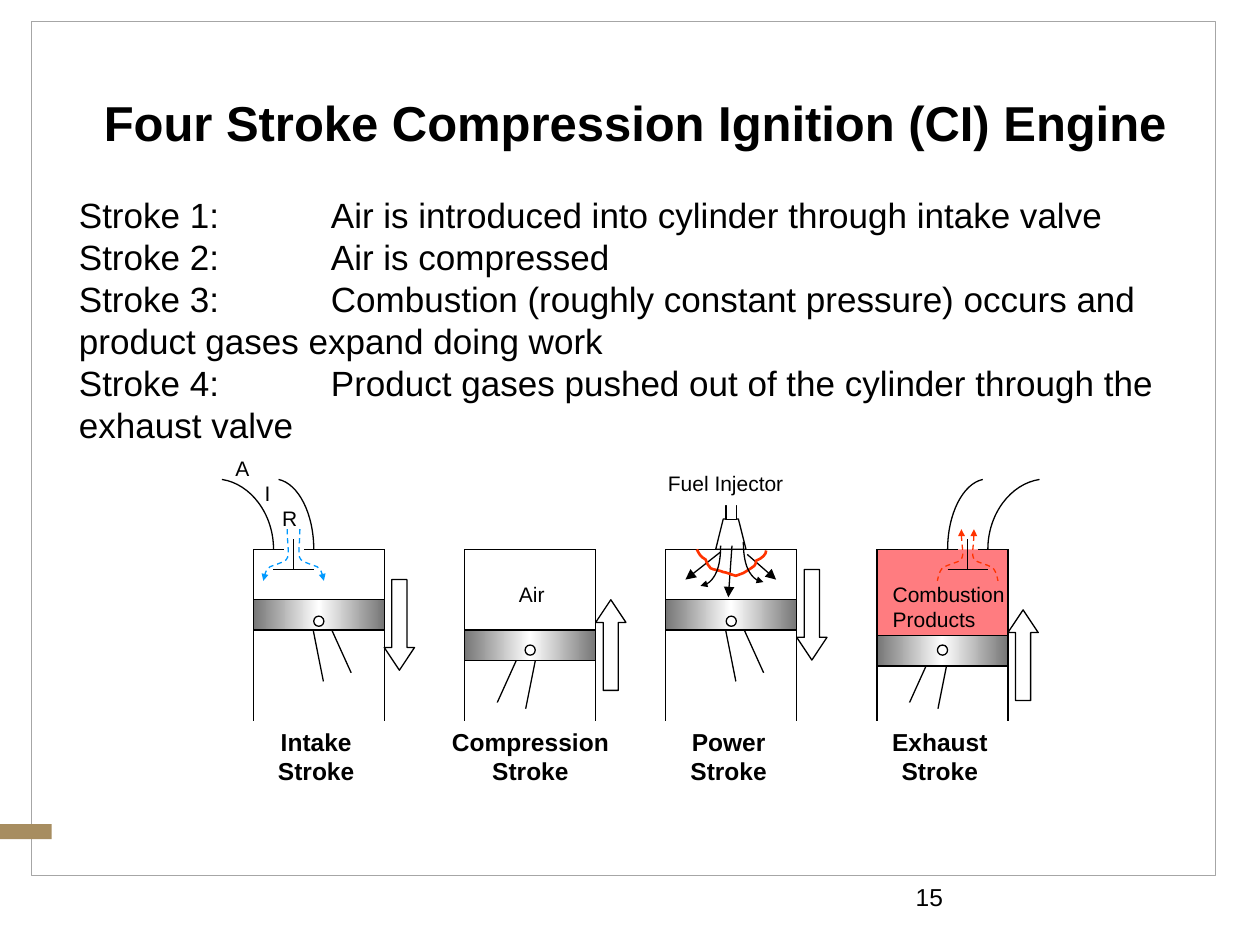
"""Build a slide on the four strokes of a compression ignition engine."""
from lxml.etree import SubElement
from pptx import Presentation
from pptx.dml.color import RGBColor
from pptx.enum.dml import MSO_LINE as Dash
from pptx.enum.shapes import MSO_CONNECTOR as Link, MSO_SHAPE as Shape
from pptx.enum.text import MSO_ANCHOR as Anchor, PP_ALIGN as Align
from pptx.oxml.ns import qn
from pptx.shapes.connector import Connector
from pptx.util import Pt

COLORS = {"black": "000000", "white": "FFFFFF", "frame": "A6A6A6", "tab": "A78D60",
          "steel": "767676", "gas": "FF7C80", "air": "0099FF", "flame": "FF3300"}


def style(item, line="black", fill=None, width=0.75, dash=False, arrow=None, size="med"):
    if not isinstance(item, Connector):
        if fill:
            item.fill.solid()
            item.fill.fore_color.rgb = RGBColor.from_string(COLORS[fill])
        else:
            item.fill.background()
    if line:
        item.line.color.rgb = RGBColor.from_string(COLORS[line])
        item.line.width = Pt(width)
        if dash:
            item.line.dash_style = Dash.DASH
        if arrow:
            SubElement(item.element.spPr.find(qn("a:ln")), qn(f"a:{arrow}"),
                       type="triangle", w=size, len=size)
    else:
        item.line.fill.background()
    if isinstance(item, Connector):
        SubElement(item.element.spPr, qn("a:effectLst"))
    else:
        item.shadow.inherit = False
    return item


def write(frame, lines, size, bold=False, align=Align.LEFT, indents=None, tab=None):
    frame.word_wrap = True
    for number, line in enumerate(lines):
        paragraph = frame.paragraphs[0] if number == 0 else frame.add_paragraph()
        paragraph.alignment = align
        paragraph.line_spacing = Pt(size * 1.2)
        properties = paragraph._p.get_or_add_pPr()
        if indents:
            properties.set("marL", str(Pt(indents[number])))
        if tab:
            SubElement(SubElement(properties, qn("a:tabLst")), qn("a:tab"),
                       pos=str(Pt(tab)), algn="l")
        run = paragraph.add_run()
        run.text = line
        run.font.name = "Arial"
        run.font.size = Pt(size)
        run.font.bold = bold
        run.font.color.rgb = RGBColor.from_string(COLORS["black"])


deck = Presentation()
deck.slide_width, deck.slide_height = Pt(720), Pt(540)
slide = deck.slides.add_slide(deck.slide_layouts[5])
shapes = slide.shapes

title = shapes.title
title.left, title.top, title.width, title.height = Pt(38), Pt(50.7), Pt(650), Pt(38)
title.text_frame.vertical_anchor = Anchor.MIDDLE
write(title.text_frame, ["Four Stroke Compression Ignition (CI) Engine"], 28, True, Align.CENTER)

style(shapes.add_shape(Shape.RECTANGLE, Pt(18), Pt(12.2), Pt(676.8), Pt(488.2)), "frame")
style(shapes.add_shape(Shape.RECTANGLE, Pt(0), Pt(470.9), Pt(29.5), Pt(8.6)), None, "tab")

HEAD, FOOT, BORE = 313.9, 411.8, 74.9
PISTON_HEIGHT, PIN, ARROW_WIDTH, ARROW_HEIGHT = 17.3, 5.8, 17.3, 51.8
INTAKE_AXIS, EXHAUST_AXIS, INJECTOR_AXIS = 167.8, 553, 417.6
ROD = [(20.2, 33.1), (3.6, -3.6), (-4.3, -0.7), (3.6, 38.9)]
ROD_END_WIDTH, ROD_END_HEIGHT = 34.6, 11.5

style(shapes.add_shape(Shape.RECTANGLE, Pt(501.1), Pt(HEAD), Pt(BORE), Pt(63.4)), None, "gas")

strokes = [
    ("Intake", 144.7, 342.7, 352.1, 1, Shape.DOWN_ARROW, 331.2, INTAKE_AXIS, 144.7, 72),
    ("Compression", 265.5, 360, 368.6, -1, Shape.UP_ARROW, 342.7, None, 236.9, 132.5),
    ("Power", 380.4, 342.7, 352.1, 1, Shape.DOWN_ARROW, 325.4, None, 380.4, 72),
    ("Exhaust", 501.1, 363.3, 368.6, -1, Shape.UP_ARROW, 348.5, EXHAUST_AXIS, 501.1, 72),
]
for name, left, crown, pin_top, lean, arrow, arrow_top, valve, label_left, label_width in strokes:
    right, middle = left + BORE, left + BORE / 2
    rod_points = [(Pt(middle + lean * x), Pt(pin_top + PIN / 2 + y)) for x, y in ROD]
    rod = shapes.build_freeform(*rod_points[0], scale=1.0)
    rod.add_line_segments(rod_points[1:], close=True)
    style(rod.convert_to_shape(), fill="white")
    rod_end = style(shapes.add_shape(
        Shape.RECTANGLE, Pt(middle + lean * 14.4 - ROD_END_WIDTH / 2), Pt(pin_top + 34),
        Pt(ROD_END_WIDTH), Pt(ROD_END_HEIGHT)), None, "white")
    rod_end.rotation = 342.8 if lean > 0 else 12.6

    piston = style(shapes.add_shape(Shape.RECTANGLE, Pt(left), Pt(crown), Pt(BORE),
                                    Pt(PISTON_HEIGHT)))
    piston.fill.gradient()
    piston.fill.gradient_angle = 0
    stops = piston.element.spPr.find(qn("a:gradFill")).find(qn("a:gsLst"))
    for stop in list(stops):
        stops.remove(stop)
    for position, shade in ((0, "steel"), (50000, "white"), (100000, "steel")):
        stop = SubElement(stops, qn("a:gs"), pos=str(position))
        SubElement(stop, qn("a:srgbClr"), val=COLORS[shade])
    style(shapes.add_shape(Shape.OVAL, Pt(middle - PIN / 2), Pt(pin_top), Pt(PIN), Pt(PIN)),
          fill="white")

    edges = [(left, FOOT, left, HEAD), (right, FOOT, right, HEAD)]
    if valve:
        edges += [(left, HEAD, valve - PIN, HEAD), (valve + PIN, HEAD, right, HEAD),
                  (valve - 11.5, 325.4, valve + 11.5, 325.4), (valve, 325.4, valve, 308.2)]
    elif name == "Power":
        edges += [(left, HEAD, left + 17.3, HEAD), (left + 11.5, HEAD, right, HEAD)]
    else:
        edges.append((left, HEAD, right, HEAD))
    for edge in edges:
        style(shapes.add_connector(Link.STRAIGHT, *map(Pt, edge)))

    motion = style(shapes.add_shape(arrow, Pt(right), Pt(arrow_top), Pt(ARROW_WIDTH),
                                    Pt(ARROW_HEIGHT)), fill="white")
    motion.adjustments[0], motion.adjustments[1] = 0.5, 0.75
    label = shapes.add_textbox(Pt(label_left), Pt(411.8), Pt(label_width), Pt(42))
    write(label.text_frame, [name, "Stroke"], 14, True, Align.CENTER)

style(shapes.add_shape(Shape.TRAPEZOID, Pt(409), Pt(296.6), Pt(17.3), Pt(17.3)), fill="white")
style(shapes.add_shape(Shape.RECTANGLE, Pt(414.9), Pt(285.8), Pt(5.8), Pt(11.2)), fill="white")
style(shapes.add_shape(Shape.RECTANGLE, Pt(403.2), Pt(277.2), Pt(28.8), Pt(11.5)), None, "white")
for spray in [(411.8, 315.4, 391.7, 331.2), (418.3, 311.8, 416.2, 341.3),
              (427, 316.8, 443.5, 331.2)]:
    style(shapes.add_connector(Link.STRAIGHT, *map(Pt, spray)), arrow="tailEnd")

flow = [(3.6, 302.4), (3.6, 316.1), (0.7, 319.7), (7.9, 321.8), (13, 324), (15.5, 322.5), (17.3, 331.9)]
inner_duct = [(-8.6, 274), (2.9, 276.5), (11.5, 293.8), (11.5, HEAD)]
outer_duct = [(-41, 274), (-24.5, 276.5), (-11.5, 293.8), (-11.5, HEAD)]
left_spray = [(-17.3, 334.8), (-10.8, 334.8), (-5.8, 324.7), (-5.8, 311.8)]
right_spray = [(18.7, 332.6), (12.2, 332.6), (7.2, 322.6), (7.2, 309.6)]
flame = [(-19.4, 313.9), (-18, 316.8), (-17.3, 318.2), (-14.4, 319.7),
         (-13.7, 321.8), (-13, 323.3), (-11.5, 324.7),
         (-10.8, 325.4), (-5, 326.2), (-4.3, 326.9),
         (-2.9, 326.9), (0, 328.3), (2.9, 329),
         (8.6, 326.9), (5.8, 328.3), (11.5, 324.7),
         (13.7, 323.3), (14.4, 322.6), (14.4, 320.4),
         (18, 319), (20.2, 316.8), (20.2, 314.6)]
curves = [(flame, INJECTOR_AXIS, 1, {"line": "flame", "width": 1.5}),
          (left_spray, INJECTOR_AXIS, 1, {"arrow": "headEnd", "size": "sm"}),
          (right_spray, INJECTOR_AXIS, 1, {"arrow": "headEnd", "size": "sm"})]
for axis, side, color, end in ((INTAKE_AXIS, 1, "air", "tailEnd"),
                               (EXHAUST_AXIS, -1, "flame", "headEnd")):
    curves += [(duct, axis, side, {}) for duct in (inner_duct, outer_duct)]
    curves += [(flow, axis, mirror, {"line": color, "dash": True, "arrow": end, "size": "sm"})
               for mirror in (1, -1)]
for points, axis, side, look in curves:
    placed = [(Pt(axis + side * x), Pt(y)) for x, y in points]
    builder = shapes.build_freeform(*placed[0], scale=1.0)
    builder.add_line_segments(placed[1:], close=False)
    curve = builder.convert_to_shape()
    segments = list(curve.element.spPr.iter(qn("a:lnTo")))
    for first, second, third in zip(segments[::3], segments[1::3], segments[2::3]):
        bend = SubElement(first.getparent(), qn("a:cubicBezTo"))
        for segment in (first, second, third):
            bend.append(segment[0])
            segment.getparent().remove(segment)
    style(curve, **look)

for lines, left, top, width, height, align, indents in [
        (["A", "I", "R"], 127.4, 256.7, 51.8, 57.6, Align.LEFT, [0, 16.7, 26.7]),
        (["Air"], 278, 328.7, 51.8, 28.8, Align.CENTER, None),
        (["Fuel Injector"], 374.6, 265.2, 95, 28.8, Align.LEFT, None),
        (["Combustion", "Products"], 503, 328.7, 90, 34.6, Align.LEFT, None)]:
    note = shapes.add_textbox(Pt(left), Pt(top), Pt(width), Pt(height))
    write(note.text_frame, lines, 12, align=align, indents=indents)

summary = shapes.add_textbox(Pt(38), Pt(107), Pt(650), Pt(152))
write(summary.text_frame, [
    "Stroke 1:\tAir is introduced into cylinder through intake valve",
    "Stroke 2:\tAir is compressed",
    "Stroke 3:\tCombustion (roughly constant pressure) occurs and product gases expand doing work",
    "Stroke 4:\tProduct gases pushed out of the cylinder through the exhaust valve"], 20, tab=144)

page_number = shapes.add_textbox(Pt(516.2), Pt(500.4), Pt(167.8), Pt(28.8))
write(page_number.text_frame, ["15"], 14)

deck.save("out.pptx")
